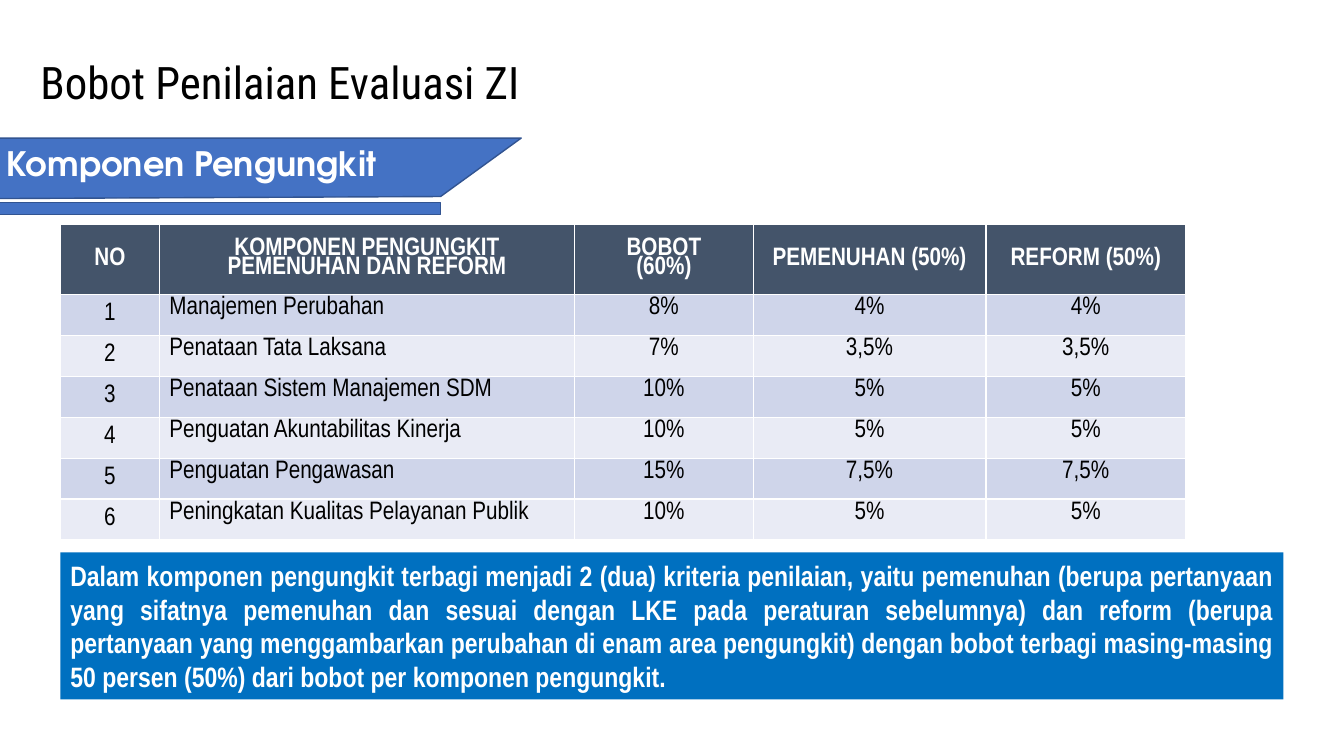
import pptx
import pptx.dml.color
import pptx.enum.shapes
import pptx.enum.text
import pptx.util

Inches = pptx.util.Inches
Pt = pptx.util.Pt
ALIGN = pptx.enum.text.PP_ALIGN
ANCHOR = pptx.enum.text.MSO_ANCHOR
RECTANGLE = pptx.enum.shapes.MSO_SHAPE.RECTANGLE

COLORS = {
    "banner": "4472C4",
    "banner_line": "325491",
    "header": "44546A",
    "odd_row": "CFD5EA",
    "even_row": "E9EBF5",
    "note": "0070C0",
    "white": "FFFFFF",
    "black": "000000",
}
TABLE_FONT = "Arial Narrow"
COLUMN_WIDTHS = [0.98, 4.12, 1.77, 2.31, 1.98]
HEADER_HEIGHT = 0.69
HEADINGS = [
    "NO",
    "KOMPONEN PENGUNGKIT\nPEMENUHAN DAN REFORM",
    "BOBOT\n(60%)",
    "PEMENUHAN (50%)",
    "REFORM (50%)",
]
COMPONENTS = [
    ("Manajemen Perubahan", "8%", "4%", "4%"),
    ("Penataan Tata Laksana", "7%", "3,5%", "3,5%"),
    ("Penataan Sistem Manajemen SDM", "10%", "5%", "5%"),
    ("Penguatan Akuntabilitas Kinerja", "10%", "5%", "5%"),
    ("Penguatan Pengawasan", "15%", "7,5%", "7,5%"),
    ("Peningkatan Kualitas Pelayanan Publik", "10%", "5%", "5%"),
]
NOTE = (
    "Dalam komponen pengungkit terbagi menjadi 2 (dua) kriteria penilaian, yaitu "
    "pemenuhan (berupa pertanyaan yang sifatnya pemenuhan dan sesuai dengan LKE pada "
    "peraturan sebelumnya) dan reform (berupa pertanyaan yang menggambarkan perubahan "
    "di enam area pengungkit) dengan bobot terbagi masing-masing 50 persen (50%) dari "
    "bobot per komponen pengungkit."
)


def rgb(name):
    return pptx.dml.color.RGBColor.from_string(COLORS[name])


def paint(shape, fill, line=None):
    shape.shadow.inherit = False
    shape.fill.solid()
    shape.fill.fore_color.rgb = rgb(fill)
    if line:
        shape.line.color.rgb = rgb(line)
        shape.line.width = Pt(1)
    else:
        shape.line.fill.background()


def write(text_frame, text, font, size, color, bold, align):
    text_frame.text = text
    text_frame.word_wrap = True
    for paragraph in text_frame.paragraphs:
        paragraph.alignment = align
        paragraph.font.name = font
        paragraph.font.size = Pt(size)
        paragraph.font.bold = bold
        paragraph.font.color.rgb = rgb(color)


def set_title(slide, left, top, width, height):
    title = slide.shapes.title
    title.left, title.top = Inches(left), Inches(top)
    title.width, title.height = Inches(width), Inches(height)
    frame = title.text_frame
    write(frame, "Bobot Penilaian Evaluasi ZI", "Roboto Condensed", 32, "black",
          False, ALIGN.LEFT)
    frame.auto_size = pptx.enum.text.MSO_AUTO_SIZE.NONE
    frame.vertical_anchor = ANCHOR.TOP
    frame.margin_left = frame.margin_right = frame.margin_bottom = 0
    frame.margin_top = Inches(0.01)
    frame.paragraphs[0].line_spacing = 1.0
    frame.paragraphs[0].space_before = Pt(1)


def add_banner(slide, left, top, width, height):
    """Slanted heading flag with a thin bar below it."""
    bar_width = width - 0.8
    flag_height = height - 0.16
    builder = slide.shapes.build_freeform(Inches(left), Inches(top), scale=1.0)
    builder.add_line_segments([
        (Inches(left + width), Inches(top)),
        (Inches(left + bar_width), Inches(top + flag_height - 0.02)),
        (Inches(left + 0.01), Inches(top + flag_height)),
    ])
    flag = builder.convert_to_shape()
    paint(flag, "banner", "banner_line")
    write(flag.text_frame, "Komponen Pengungkit", "TeX Gyre Adventor", 24, "white",
          True, ALIGN.JUSTIFY)
    flag.text_frame.vertical_anchor = ANCHOR.TOP

    bar = slide.shapes.add_shape(RECTANGLE, Inches(left), Inches(top + height - 0.12),
                                 Inches(bar_width), Inches(0.12))
    paint(bar, "banner", "banner_line")


def add_weights_table(slide, left, top, width, height):
    rows = [HEADINGS] + [(str(number), *component)
                         for number, component in enumerate(COMPONENTS, 1)]
    table = slide.shapes.add_table(len(rows), len(HEADINGS), Inches(left), Inches(top),
                                   Inches(width), Inches(height)).table
    for column, column_width in zip(table.columns, COLUMN_WIDTHS):
        column.width = Inches(column_width)
    row_height = (height - HEADER_HEIGHT) / len(COMPONENTS)
    for row_index, values in enumerate(rows):
        is_header = row_index == 0
        table.rows[row_index].height = Inches(HEADER_HEIGHT if is_header else row_height)
        band = "header" if is_header else ("odd_row" if row_index % 2 else "even_row")
        for column_index, value in enumerate(values):
            cell = table.cell(row_index, column_index)
            cell.fill.solid()
            cell.fill.fore_color.rgb = rgb(band)
            is_name = column_index == 1 and not is_header
            write(cell.text_frame, value, TABLE_FONT, 18,
                  "white" if is_header else "black", is_header,
                  ALIGN.LEFT if is_name else ALIGN.CENTER)
            for paragraph in cell.text_frame.paragraphs:
                paragraph.line_spacing = 0.8
            centred = is_header or column_index == 0
            cell.vertical_anchor = ANCHOR.MIDDLE if centred else ANCHOR.TOP


def add_note(slide, left, top, width, height):
    note = slide.shapes.add_shape(RECTANGLE, Inches(left), Inches(top),
                                  Inches(width), Inches(height))
    paint(note, "note")
    write(note.text_frame, NOTE, TABLE_FONT, 20, "white", True, ALIGN.JUSTIFY)
    note.text_frame.vertical_anchor = ANCHOR.MIDDLE


def main():
    presentation = pptx.Presentation()
    presentation.slide_width = Inches(13.33)
    presentation.slide_height = Inches(7.5)
    slide = presentation.slides.add_slide(presentation.slide_layouts[5])
    set_title(slide, 0.4, 0.53, 7.06, 0.55)
    add_banner(slide, -0.03, 1.37, 5.2, 0.76)
    add_weights_table(slide, 0.6, 2.23, 11.16, 3.13)
    add_note(slide, 0.6, 5.48, 12.13, 1.46)
    presentation.save("out.pptx")


if __name__ == "__main__":
    main()
